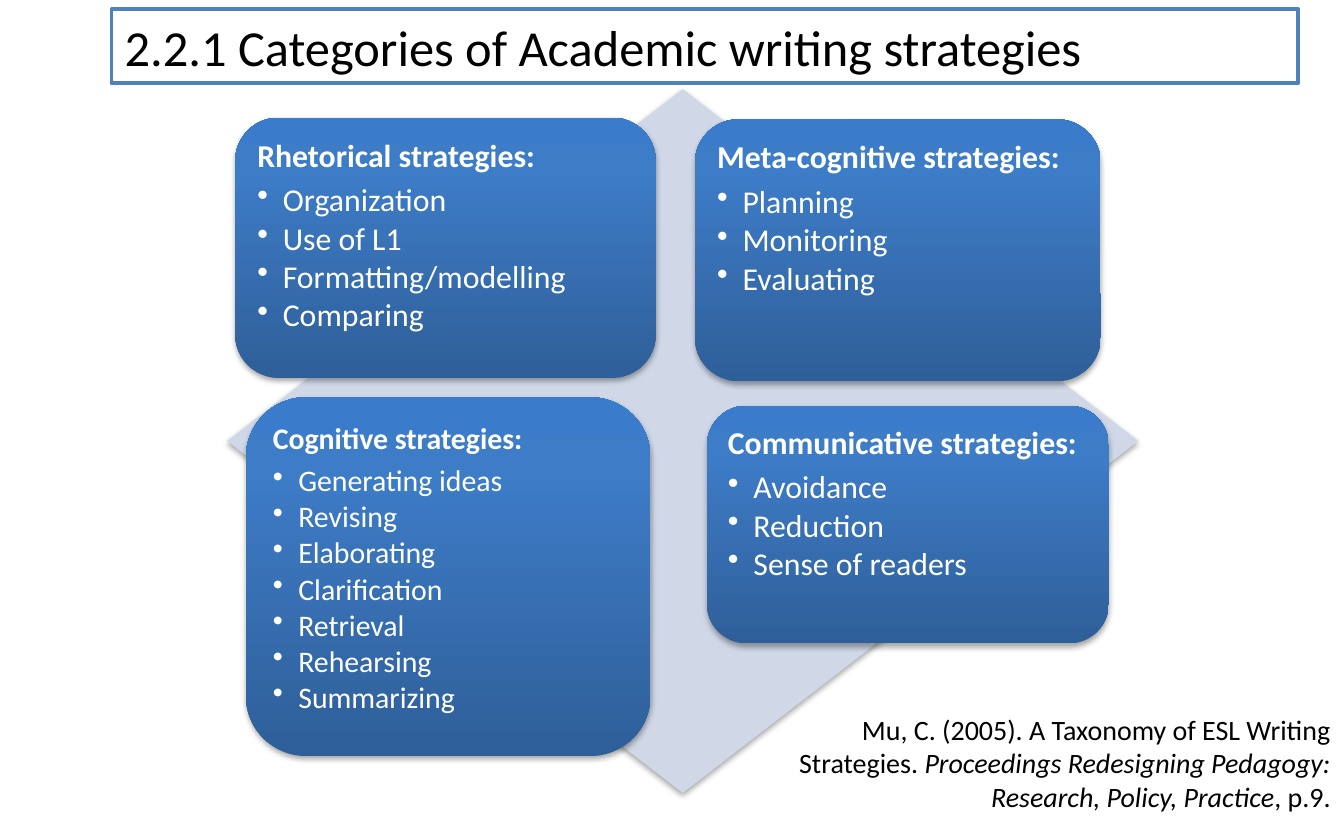
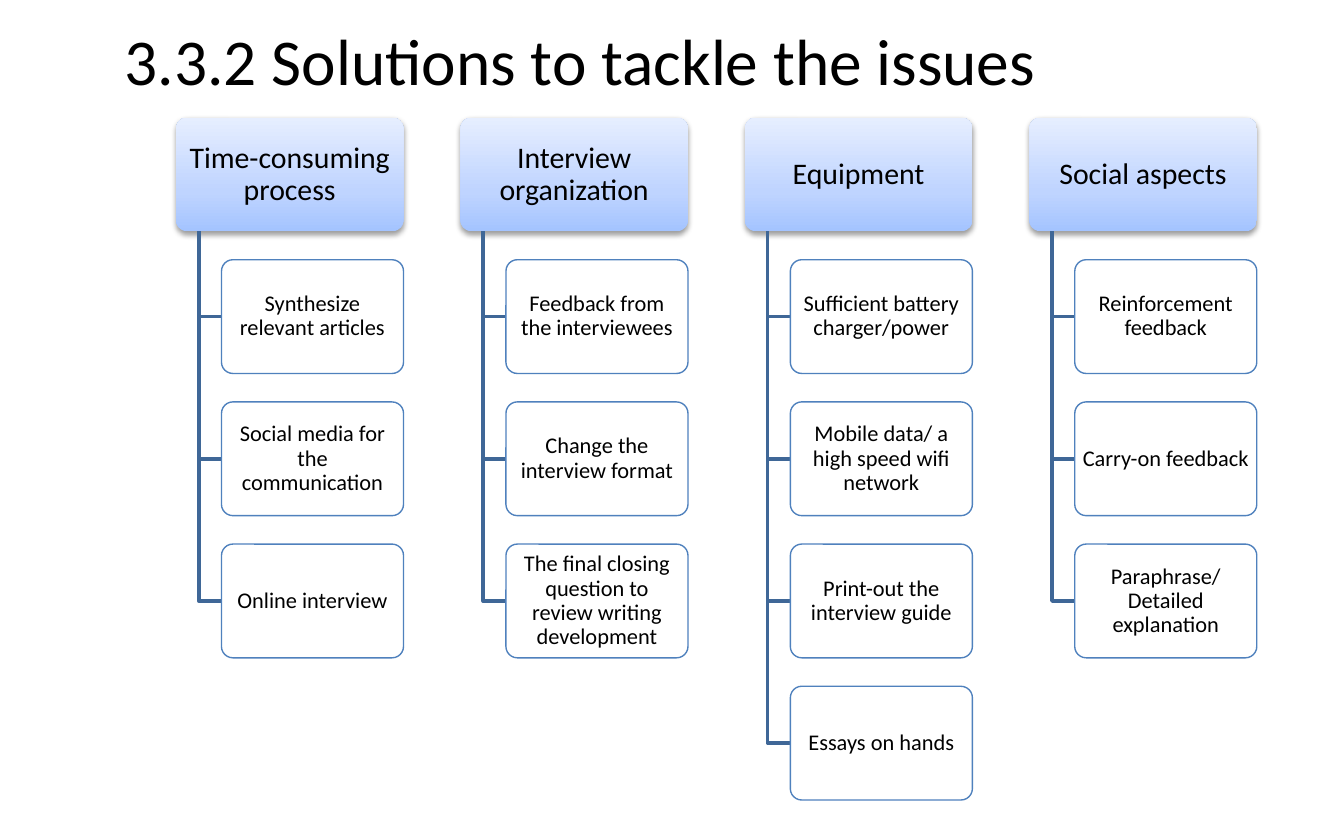
from copy import deepcopy

from lxml.etree import SubElement
from pptx import Presentation
from pptx.dml.color import RGBColor
from pptx.enum.shapes import MSO_SHAPE as Preset
from pptx.enum.text import MSO_ANCHOR as Anchor, PP_ALIGN as Align
from pptx.oxml.ns import qn
from pptx.util import Inches, Pt

# Shared colours and formats
rgb = RGBColor.from_string
BLACK, WHITE, BLUE, STEM, PALE = "000000", "FFFFFF", "4F81BD", "3F6797", "D0D8E8"
DEEP_BLUE = [(0, "2F5F99"), (0.8, "3D7CC7"), (1, "3A7CCB")]
LIGHT_BLUE = [(0, "A4C4FF"), (0.35, "BFD4FF"), (1, "E6EEFF")]
MIDDLE = {"vertical_anchor": Anchor.MIDDLE}
SNUG = {**MIDDLE, "margin_left": Inches(0.03), "margin_right": Inches(0.03),
        "margin_top": Inches(0.02), "margin_bottom": Inches(0.02)}
ROOMY = {"vertical_anchor": Anchor.TOP,
         **{f"margin_{side}": Inches(0.07) for side in ("left", "right", "top", "bottom")}}
CENTRED = {"alignment": Align.CENTER, "line_spacing": 0.9}
LEFT = {"alignment": Align.LEFT}

deck = Presentation()
deck.slide_width, deck.slide_height = Inches(10), Inches(6.25)
COL, ROW = deck.slide_width / 100, deck.slide_height / 100
strategies, solutions = [deck.slides.add_slide(deck.slide_layouts[6]) for _ in range(2)]


def add_box(slide, preset, place, fill=None, line=None, line_width=1, shadow=0):
    """Add a preset shape, or a text box without one; place is in hundredths of the slide."""
    left, top, width, height = place
    place = [int(v) for v in (left * COL, top * ROW, width * COL, height * ROW)]
    box = slide.shapes.add_shape(preset, *place) if preset else slide.shapes.add_textbox(*place)
    box.shadow.inherit = False
    properties = box._element.spPr
    if isinstance(fill, list):
        box.fill.gradient()
        box.fill.gradient_angle = 90
        stops = properties.find(".//" + qn("a:gsLst"))
        stops.append(deepcopy(stops[0]))
        for stop, (position, color) in zip(box.fill.gradient_stops, fill):
            stop.position, stop.color.rgb = position, rgb(color)
    elif fill:
        box.fill.solid()
        box.fill.fore_color.rgb = rgb(fill)
    else:
        box.fill.background()
    if line:
        box.line.color.rgb, box.line.width = rgb(line), Pt(line_width)
    else:
        box.line.fill.background()
    if shadow:
        outer = SubElement(properties.find(qn("a:effectLst")), qn("a:outerShdw"),
                           blurRad=str(Pt(3.1)), dist=str(Pt(1.7)), dir="5400000", rotWithShape="0")
        shade = SubElement(outer, qn("a:srgbClr"), val=BLACK)
        SubElement(shade, qn("a:alpha"), val=str(shadow * 1000))
    return box


def write(box, paragraphs, size, color, frame_format, paragraph_format):
    """Fill a box with paragraphs, each a list of (text, font format) runs."""
    frame = box.text_frame
    frame.word_wrap = True
    for key, value in frame_format.items():
        setattr(frame, key, value)
    for index, runs in enumerate(paragraphs):
        paragraph = frame.paragraphs[0] if index == 0 else frame.add_paragraph()
        for key, value in paragraph_format.items():
            setattr(paragraph, key, value)
        for text, font_format in runs:
            run = paragraph.add_run()
            run.text = text
            run.font.color.rgb = rgb(color)
            for key, value in {"name": "Calibri", "size": Pt(size), **font_format}.items():
                setattr(run.font, key, value)
    return frame.paragraphs


# Strategies: diamond behind four panels
add_box(strategies, Preset.DIAMOND, (16.9, 10.6, 67.8, 83.8), PALE, shadow=35)
panels = [
    ((17.5, 14, 31.3, 31), 17, "Rhetorical strategies:",
     ["Organization", "Use of L1", "Formatting/modelling", "Comparing"]),
    ((51.7, 14.2, 30.2, 31.2), 17, "Meta-cognitive strategies:",
     ["Planning", "Monitoring", "Evaluating"]),
    ((18.3, 47.3, 30.1, 42.7), 16, "Cognitive strategies:",
     ["Generating ideas", "Revising", "Elaborating", "Clarification", "Retrieval",
      "Rehearsing", "Summarizing"]),
    ((52.6, 48.3, 29.9, 28.3), 17, "Communicative strategies:",
     ["Avoidance", "Reduction", "Sense of readers"]),
]
for place, size, heading, examples in panels:
    panel = add_box(strategies, Preset.ROUNDED_RECTANGLE, place, DEEP_BLUE, shadow=35)
    lines = [[(heading, {"bold": True})]] + [[(example, {})] for example in examples]
    first, *bullets = write(panel, lines, size, WHITE, ROOMY, {**LEFT, "line_spacing": 0.9})
    first.space_after = Pt(size * 0.32)
    for bullet in bullets:
        bullet.level, bullet.space_after = 1, Pt(size * 0.13)
        layout = bullet._p.get_or_add_pPr()
        layout.set("marL", str(Inches(0.19)))
        layout.set("indent", str(-Inches(0.19)))
        SubElement(layout, qn("a:buChar"), char="•")

# Titles
title = add_box(strategies, Preset.RECTANGLE, (8.3, 1.1, 88.3, 8.8), WHITE, BLUE, 2)
write(title, [[("2.2.1 Categories of Academic writing strategies", {})]], 27, BLACK, MIDDLE, LEFT)
title = add_box(solutions, None, (8.3, 4, 88.3, 6.1))
write(title, [[("3.3.2 Solutions to tackle the issues", {})]], 35, BLACK, MIDDLE, LEFT)

# Citation
citation = add_box(strategies, None, (58.3, 81.9, 41.7, 17.8))
write(citation, [[
    ("Mu, C. (2005). A Taxonomy of ESL Writing Strategies. ", {}),
    ("Proceedings Redesigning Pedagogy: Research, Policy, Practice", {"italic": True}),
    (", p.9.", {}),
]], 15, BLACK, MIDDLE, {"alignment": Align.RIGHT})

# Solutions: one column per issue, cards hanging from its header
issues = {
    "Time-consuming process": [
        "Synthesize relevant articles", "Social media for the communication", "Online interview"],
    "Interview organization": [
        "Feedback from the interviewees", "Change the interview format",
        "The final closing question to review writing development"],
    "Equipment": [
        "Sufficient battery charger/power", "Mobile data/ a high speed wifi network",
        "Print-out the interview guide", "Essays on hands"],
    "Social aspects": [
        "Reinforcement feedback", "Carry-on feedback", "Paraphrase/Detailed explanation"],
}
header_width, header_height, header_top = 16.93, 13.54, 14
for column, (issue, answers) in enumerate(issues.items()):
    left = 13.1 + column * header_width * 1.25
    header = add_box(solutions, Preset.ROUNDED_RECTANGLE,
                     (left, header_top, header_width, header_height), LIGHT_BLUE, shadow=38)
    header.adjustments[0] = 0.1
    write(header, [[(issue, {})]], 16, BLACK, SNUG, CENTRED)
    stem_left, card_left = left + header_width * 0.1, left + header_width * 0.2
    for row, answer in enumerate(answers, 1):
        card_top = header_top + row * header_height * 1.25
        card_middle = card_top + header_height / 2
        path = solutions.shapes.build_freeform(
            int(stem_left * COL), int((header_top + header_height) * ROW))
        path.add_line_segments([(int(stem_left * COL), int(card_middle * ROW)),
                                (int(card_left * COL), int(card_middle * ROW))], close=False)
        stem = path.convert_to_shape()
        stem.shadow.inherit = False
        stem.fill.background()
        stem.line.color.rgb, stem.line.width = rgb(STEM), Pt(2)
        card = add_box(solutions, Preset.ROUNDED_RECTANGLE,
                       (card_left, card_top, header_width * 0.8, header_height), WHITE, BLUE, 0.75)
        card.adjustments[0] = 0.1
        card_color = card._element.spPr.find(qn("a:solidFill"))[0]
        SubElement(card_color, qn("a:alpha"), val="90000")
        write(card, [[(answer, {})]], 12, BLACK, SNUG, CENTRED)

deck.save("out.pptx")
